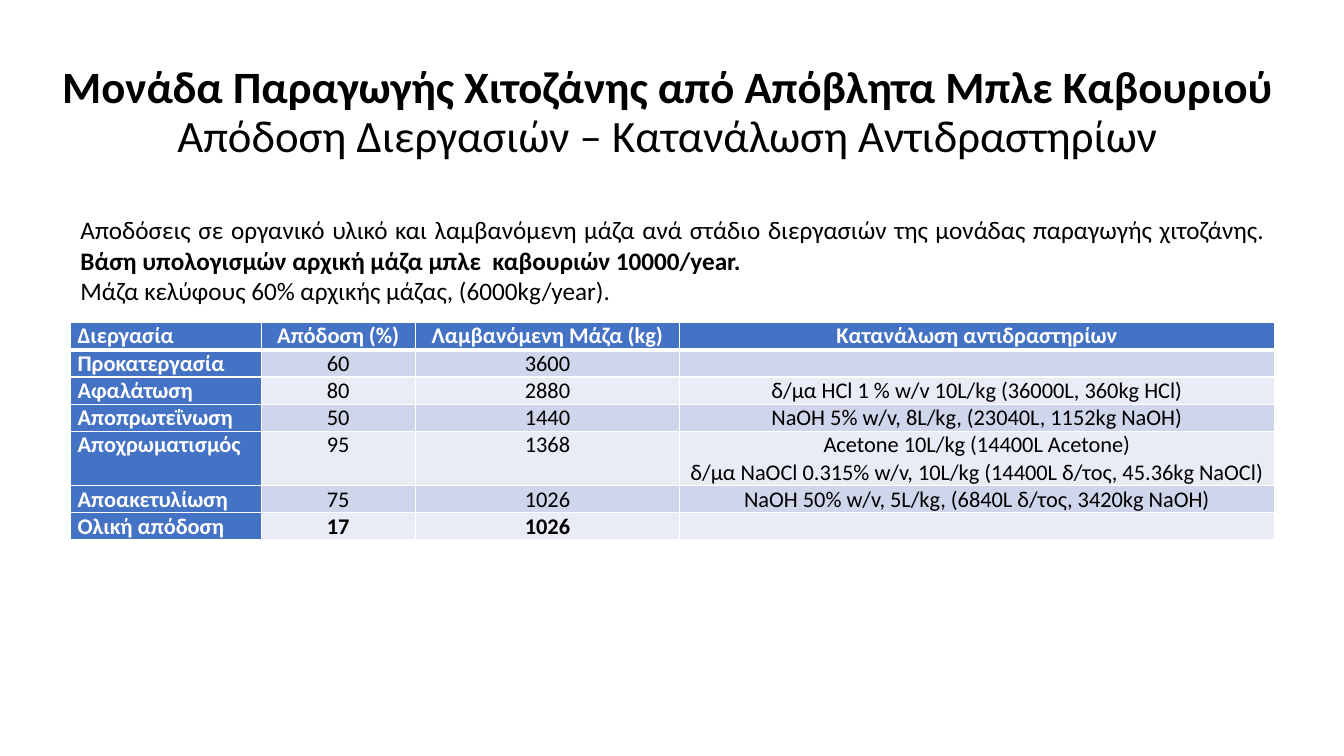
"""Build the slide on process yields and reagent use of the chitosan unit."""
from lxml.etree import SubElement as Sub
from pptx import Presentation
from pptx.dml.color import RGBColor as Rgb
from pptx.enum.text import MSO_ANCHOR as Anchor, PP_ALIGN as Align
from pptx.oxml.ns import qn
from pptx.util import Inches, Pt


def add_run(par, text, size, bold=False, color="000000"):
    run = par.add_run()
    run.text = text
    font = run.font
    font.name, font.size, font.bold = "Calibri", Pt(size), bold
    font.color.rgb = Rgb.from_string(color)


def add_edge(cell, side, width):
    line = Sub(cell._tc.get_or_add_tcPr(), qn("a:" + side), w=str(Pt(width)))
    fill = Sub(line, qn("a:solidFill"))
    Sub(fill, qn("a:srgbClr"), val="FFFFFF")


deck = Presentation()
deck.slide_width, deck.slide_height = Inches(13.33), Inches(7.5)
slide = deck.slides.add_slide(deck.slide_layouts[6])
shapes = slide.shapes

title = shapes.add_textbox(Inches(-0.08), Inches(0.4), Inches(13.41), Inches(1.45)).text_frame
title.word_wrap = True
title.vertical_anchor = Anchor.MIDDLE
par = title.paragraphs[0]
par.alignment, par.line_spacing = Align.CENTER, 0.9
add_run(par, "Μονάδα Παραγωγής Χιτοζάνης από Απόβλητα Μπλε Καβουριού", 32, True)
par.add_line_break()
add_run(par, "Απόδοση Διεργασιών – Κατανάλωση Αντιδραστηρίων", 32)

rows = [
    ("Διεργασία", "Απόδοση (%)", "Λαμβανόμενη Μάζα (kg)", "Κατανάλωση αντιδραστηρίων"),
    ("Προκατεργασία", "60", "3600", ""),
    ("Αφαλάτωση", "80", "2880", "δ/μα HCl 1 % w/v 10L/kg (36000L, 360kg HCl)"),
    ("Αποπρωτεΐνωση", "50", "1440", "ΝaΟΗ 5% w/v, 8L/kg, (23040L, 1152kg NaOH)"),
    ("Αποχρωματισμός", "95", "1368",
     "Acetone 10L/kg (14400L Acetone)\n"
     "δ/μα NaOCl 0.315% w/v, 10L/kg (14400L δ/τος, 45.36kg NaOCl)"),
    ("Αποακετυλίωση", "75", "1026", "ΝaΟΗ 50% w/v, 5L/kg, (6840L δ/τος, 3420kg NaOH)"),
    ("Ολική απόδοση", "17", "1026", ""),
]
widths = [1.89, 1.53, 2.62, 5.9]
table = shapes.add_table(len(rows), len(widths), Inches(0.7), Inches(3.2),
                         Inches(11.94), Inches(2.13)).table
for col, width in zip(table.columns, widths):
    col.width = Inches(width)

for i, row in enumerate(rows):
    table.rows[i].height = Inches(0.27 * (1 + row[-1].count("\n")))
    for j, text in enumerate(row):
        cell = table.cell(i, j)
        cell.margin_left = cell.margin_right = Inches(0.07)
        cell.margin_top = cell.margin_bottom = 0
        for side in ("lnL", "lnR", "lnT", "lnB"):
            thick = (i, side) in ((0, "lnB"), (1, "lnT"))
            add_edge(cell, side, 3 if thick else 1)
        head = i == 0 or j == 0
        shade = "4472C4" if head else ("E9EBF5", "CFD5EA")[i % 2]
        cell.fill.solid()
        cell.fill.fore_color.rgb = Rgb.from_string(shade)
        frame = cell.text_frame
        for k, line in enumerate(text.split("\n")):
            par = frame.add_paragraph() if k else frame.paragraphs[0]
            par.alignment = Align.CENTER if j else Align.JUSTIFY
            if line:
                add_run(par, line, 16, head or i == len(rows) - 1,
                        "FFFFFF" if head else "000000")
            else:
                Sub(par._p, qn("a:endParaRPr"), sz="1600")

intro = shapes.add_textbox(Inches(0.7), Inches(2.08), Inches(11.94), Inches(1.01)).text_frame
intro.word_wrap = True
par = intro.paragraphs[0]
par.alignment = Align.JUSTIFY
add_run(par, "Αποδόσεις σε οργανικό υλικό και λαμβανόμενη μάζα ανά στάδιο διεργασιών "
        "της μονάδας παραγωγής χιτοζάνης. ", 18)
add_run(par, "Βάση υπολογισμών αρχική μάζα μπλε  καβουριών 10000/year. ", 18, True)
par = intro.add_paragraph()
par.alignment = Align.JUSTIFY
add_run(par, "Μάζα κελύφους 60% αρχικής μάζας, (6000kg/year).", 18)

deck.save("out.pptx")
